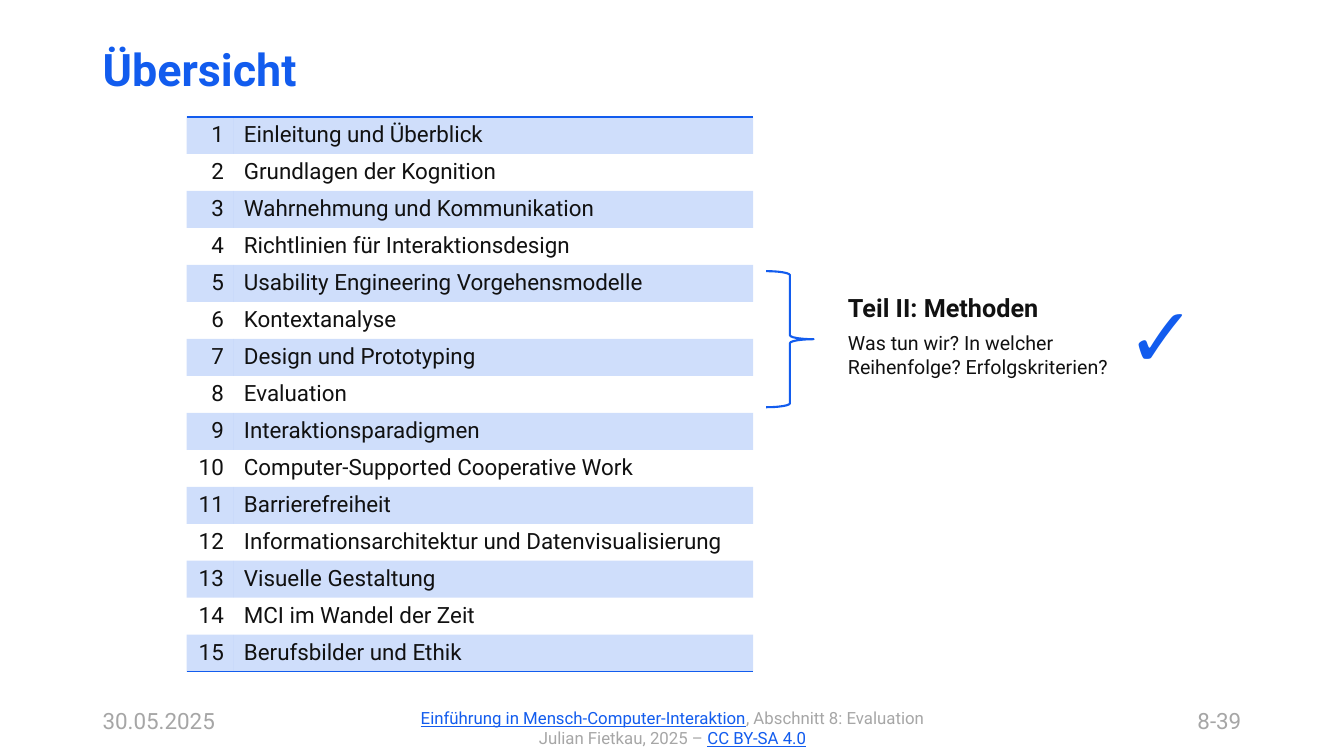
from dataclasses import dataclass

from lxml import etree
from pptx import Presentation
from pptx.dml.color import RGBColor
from pptx.enum.shapes import MSO_SHAPE
from pptx.enum.text import MSO_ANCHOR, MSO_AUTO_SIZE, PP_ALIGN
from pptx.oxml.ns import qn
from pptx.util import Emu, Pt

LEFT, MID, RIGHT = PP_ALIGN.LEFT, PP_ALIGN.CENTER, PP_ALIGN.RIGHT
TOP, MIDDLE = MSO_ANCHOR.TOP, MSO_ANCHOR.MIDDLE
GROW, FIXED = MSO_AUTO_SIZE.SHAPE_TO_FIT_TEXT, MSO_AUTO_SIZE.NONE
BRACE = MSO_SHAPE.RIGHT_BRACE
PLAIN_STYLE = "{2D5ABB26-0587-4C30-8999-92F81FD0307C}"  # no style, no grid


@dataclass(frozen=True)
class Theme:
    font: str = "Roboto"
    blue: str = "125CEE"
    ink: str = "111111"
    gray: str = "A6A6A6"
    title: int = 32
    head: int = 18
    row: int = 16
    body: int = 14
    note: int = 12
    check: int = 60
    tint: int = 20  # opacity of the row bands, percent


def px(n):
    """100 px to the inch."""
    return Emu(n * 9144)


class Deck:
    def __init__(self, theme, wide, high):
        self.theme = theme
        self.file = Presentation()
        self.file.slide_width, self.file.slide_height = px(wide), px(high)
        self.slide = self.file.slides.add_slide(self.file.slide_layouts[6])

    def style(self, para, size, color, bold=False, align=LEFT):
        para.alignment = align
        font = para.font
        font.name, font.size, font.bold = self.theme.font, Pt(size), bold
        font.color.rgb = RGBColor.from_string(color)

    def box(self, at, anchor=TOP, fit=FIXED, inset=None):
        frame = self.slide.shapes.add_textbox(*map(px, at)).text_frame
        frame.word_wrap, frame.auto_size = True, fit
        frame.vertical_anchor = anchor
        if inset is not None:
            frame.margin_left = frame.margin_right = px(inset)
            frame.margin_top = frame.margin_bottom = px(inset)
        return frame

    def line(self, frame, text, size, color, bold=False, align=LEFT, after=0):
        """Write a paragraph; a list of (text, linked) pairs gives mixed runs."""
        para = frame.paragraphs[0]
        if para.runs:
            para = frame.add_paragraph()
        self.style(para, size, color, bold, align)
        para.space_after = Pt(after)
        for words, linked in [(text, False)] if isinstance(text, str) else text:
            run = para.add_run()
            run.text = words
            if linked:
                run.font.underline = True
                run.font.color.rgb = RGBColor.from_string(self.theme.blue)
        return para

    def rule(self, cell, side):
        edge = etree.Element(qn("a:" + side), w=str(Pt(1)))
        fill = etree.SubElement(edge, qn("a:solidFill"))
        etree.SubElement(fill, qn("a:srgbClr"), val=self.theme.blue)
        cell._tc.get_or_add_tcPr().insert(0, edge)

    def tint(self, cell):
        cell.fill.solid()
        cell.fill.fore_color.rgb = RGBColor.from_string(self.theme.blue)
        color = cell._tc.tcPr.find(".//" + qn("a:srgbClr"))
        etree.SubElement(color, qn("a:alpha"), val=str(self.theme.tint * 1000))

    def table(self, at, topics, cols, high):
        frame = self.slide.shapes.add_table(len(topics), 2, *map(px, at))
        grid = frame.table
        grid.first_row = grid.horz_banding = False
        grid._tbl.tblPr.find(qn("a:tableStyleId")).text = PLAIN_STYLE
        for col, wide in zip(grid.columns, cols):
            col.width = px(wide)
        for i, topic in enumerate(topics):
            grid.rows[i].height = px(high)
            for j, text in enumerate((str(i + 1), topic)):
                cell = grid.cell(i, j)
                cell.text = text
                self.style(cell.text_frame.paragraphs[0], self.theme.row,
                           self.theme.ink, align=LEFT if j else RIGHT)
                if i % 2:
                    cell.fill.background()
                else:
                    self.tint(cell)
                if i == 0:
                    self.rule(cell, "lnT")
                if i == len(topics) - 1:
                    self.rule(cell, "lnB")
        frame.height = px(at[3])

    def brace(self, at):
        shape = self.slide.shapes.add_shape(BRACE, *map(px, at))
        shape.shadow.inherit = False
        shape.fill.background()
        shape.line.color.rgb = RGBColor.from_string(self.theme.blue)
        shape.line.width = Pt(1.5)


TOPICS = [
    "Einleitung und Überblick",
    "Grundlagen der Kognition",
    "Wahrnehmung und Kommunikation",
    "Richtlinien für Interaktionsdesign",
    "Usability Engineering Vorgehensmodelle",
    "Kontextanalyse",
    "Design und Prototyping",
    "Evaluation",
    "Interaktionsparadigmen",
    "Computer-Supported Cooperative Work",
    "Barrierefreiheit",
    "Informationsarchitektur und Datenvisualisierung",
    "Visuelle Gestaltung",
    "MCI im Wandel der Zeit",
    "Berufsbilder und Ethik",
]
FOOTER = [
    [("Einführung in Mensch-Computer-Interaktion", True),
     (", Abschnitt 8: Evaluation", False)],
    [("Julian Fietkau, 2025 – ", False), ("CC BY-SA 4.0", True)],
]


def main():
    look = Theme()
    deck = Deck(look, 1333, 750)

    # Footer: source, date, page
    source = deck.box((266, 697, 802, 50), fit=GROW)
    for runs in FOOTER:
        deck.line(source, runs, look.note, look.gray, align=MID)
    date = deck.box((92, 697, 174, 37), fit=GROW)
    deck.line(date, "30.05.2025", look.row, look.gray)
    page = deck.box((910, 697, 331, 37), fit=GROW)
    deck.line(page, "8-39", look.row, look.gray, align=RIGHT)

    # Title
    title = deck.box((92, 37, 1150, 68), MIDDLE)
    head = deck.line(title, "Übersicht", look.title, look.blue, bold=True)
    head.line_spacing = 0.9

    # Topic list
    deck.table((185, 116, 562, 550), TOPICS, (47, 515), 32)

    # Methods: brace, summary, check mark
    deck.brace((760, 269, 47, 135))
    goal = deck.box((837, 286, 268, 103), inset=4)
    deck.line(goal, "Teil II: Methoden", look.head, look.ink, bold=True, after=6)
    deck.line(goal, "Was tun wir? In welcher Reihenfolge? Erfolgskriterien?",
              look.body, look.ink, after=6)
    check = deck.box((1113, 277, 76, 118), inset=4)
    deck.line(check, "✓", look.check, look.blue, bold=True, after=6)

    deck.file.save("out.pptx")


if __name__ == "__main__":
    main()
